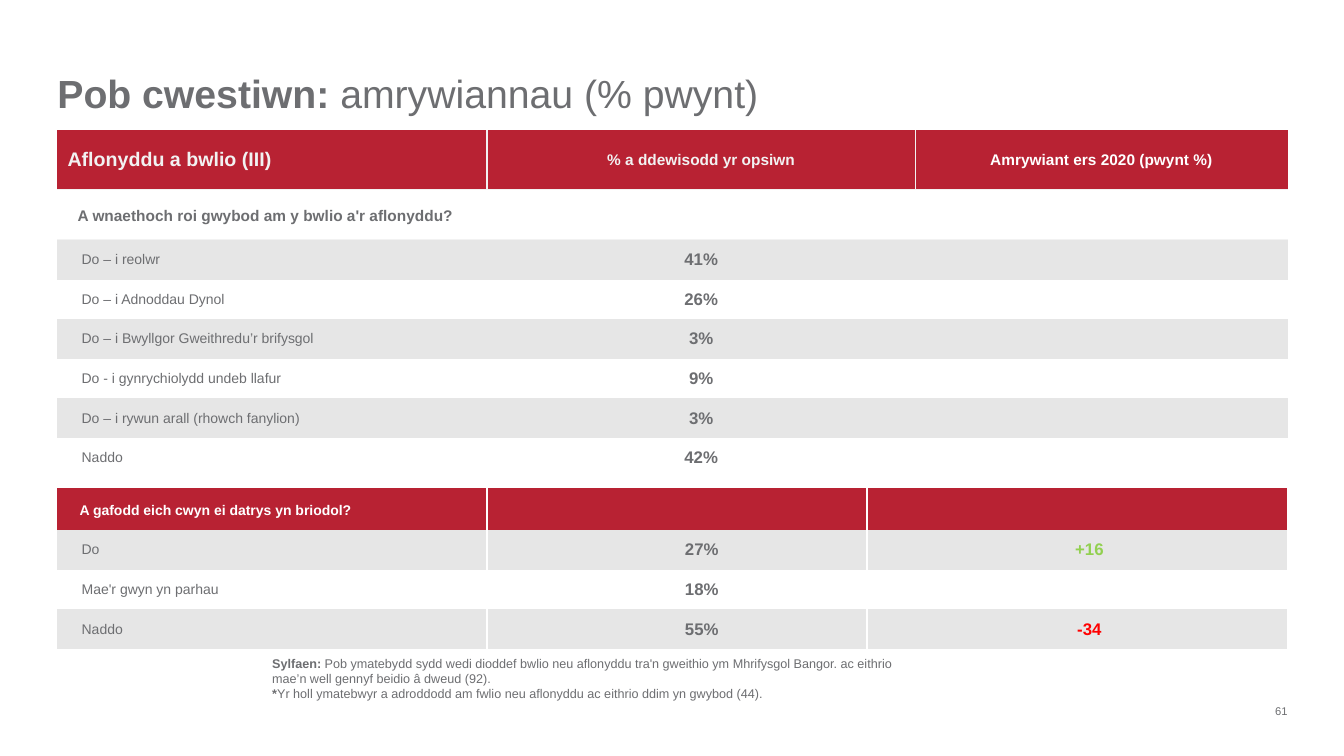
from lxml import etree
from pptx import Presentation
from pptx.dml.color import RGBColor
from pptx.enum import text
from pptx.oxml import ns
from pptx.util import Inches, Pt

# Content
TITLE = [("Pob cwestiwn: ", True), ("amrywiannau (% pwynt)", False)]
HARASSMENT_HEADS = ["Aflonyddu a bwlio (III)", "% a ddewisodd yr opsiwn",
                    "Amrywiant ers 2020 (pwynt %)"]
REPORTED_QUESTION = "A wnaethoch roi gwybod am y bwlio a'r aflonyddu?"
REPORTED = [
    ("Do – i reolwr", "41%", ""),
    ("Do – i Adnoddau Dynol", "26%", ""),
    ("Do – i Bwyllgor Gweithredu’r brifysgol", "3%", ""),
    ("Do - i gynrychiolydd undeb llafur", "9%", ""),
    ("Do – i rywun arall (rhowch fanylion)", "3%", ""),
    ("Naddo", "42%", ""),
]
RESOLVED_QUESTION = "A gafodd eich cwyn ei datrys yn briodol?"
RESOLVED = [
    ("Do", "27%", "+16"),
    ("Mae'r gwyn yn parhau", "18%", ""),
    ("Naddo", "55%", "-34"),
]
FOOTNOTE = [
    [("Sylfaen: ", True),
     ("Pob ymatebydd sydd wedi dioddef bwlio neu aflonyddu tra'n gweithio ym "
      "Mhrifysgol Bangor. ac eithrio mae’n well gennyf beidio â dweud (92).", False)],
    [("*", True),
     ("Yr holl ymatebwyr a adroddodd am fwlio neu aflonyddu ac eithrio ddim yn "
      "gwybod (44).", False)],
]
PAGE = [("61", False)]

THEME = {
    "font": "Arial", "ink": "6D6E71", "red": "B82233", "band": "E6E6E6",
    "pale": "F2F2F2", "white": "FFFFFF", "up": "92D050", "down": "FF0000",
    "title": 28, "table_title": 14, "head": 11, "label": 10, "value": 12,
    "note": 9, "page": 8,
}
NO_GRID_STYLE = "{2D5ABB26-0587-4C30-8999-92F81FD0307C}"
LEFT, WIDTH = 0.57, 12.2
LABEL_INDENT = 0.24
LEFT_ALIGN, CENTER, RIGHT = (text.PP_ALIGN.LEFT, text.PP_ALIGN.CENTER,
                             text.PP_ALIGN.RIGHT)

prs = Presentation()
prs.slide_width, prs.slide_height = Inches(13.33), Inches(7.5)
slide = prs.slides.add_slide(prs.slide_layouts[6])


def set_font(font, size, color="ink", bold=None):
    font.name = THEME["font"]
    font.size = Pt(THEME[size])
    font.color.rgb = RGBColor.from_string(THEME[color])
    font.bold = bold


def add_text(box, paragraphs, size, align=LEFT_ALIGN):
    frame = slide.shapes.add_textbox(*map(Inches, box)).text_frame
    frame.word_wrap = True
    frame.vertical_anchor = text.MSO_ANCHOR.BOTTOM
    frame.margin_left = frame.margin_right = frame.margin_top = frame.margin_bottom = 0
    for i, parts in enumerate(paragraphs):
        line = frame.paragraphs[0] if i == 0 else frame.add_paragraph()
        line.alignment = align
        set_font(line.font, size)
        for words, bold in parts:
            run = line.add_run()
            run.text = words
            run.font.bold = bold


def add_grid(top, height, columns, heads, row_count):
    """Table whose head rows are given and whose answer rows share the rest."""
    rows = heads + [(height - sum(heads)) / row_count] * row_count
    grid = slide.shapes.add_table(len(rows), len(columns), Inches(LEFT), Inches(top),
                                  Inches(WIDTH), Inches(height)).table
    grid._tbl.tblPr.find(ns.qn("a:tableStyleId")).text = NO_GRID_STYLE
    grid.horz_banding = False
    for column, width in zip(grid.columns, columns):
        column.width = Inches(width)
    for row, row_height in zip(grid.rows, rows):
        row.height = Inches(row_height)
    return grid


def set_borders(cell, sides, color):
    """Sides are given in schema order: L, R, T, B."""
    props = cell._tc.get_or_add_tcPr()
    for place, side in enumerate(sides):
        line = etree.Element(ns.qn(f"a:ln{side}"), w=str(Pt(1)))
        fill = etree.SubElement(line, ns.qn("a:solidFill"))
        etree.SubElement(fill, ns.qn("a:srgbClr"), val=THEME[color])
        props.insert(place, line)


def fill_cell(cell, words, size, color="ink", bold=False, align=LEFT_ALIGN,
              fill=None, margin=0, indent=0, spacing=None):
    cell.vertical_anchor = text.MSO_ANCHOR.MIDDLE
    cell.margin_left = cell.margin_right = Inches(margin)
    cell.margin_top = cell.margin_bottom = 0
    if fill:
        cell.fill.solid()
        cell.fill.fore_color.rgb = RGBColor.from_string(THEME[fill])
    else:
        cell.fill.background()
    line = cell.text_frame.paragraphs[0]
    line.alignment = align
    if spacing:
        line.line_spacing = spacing
    if indent:
        line._p.get_or_add_pPr().set("marL", str(Inches(indent)))
    set_font(line.font, size, color, bold)
    if words:
        line.add_run().text = words


def fill_answers(grid, first_row, answers, value_indent=0, change_indent=0):
    for i, (label, share, change) in enumerate(answers):
        fill = "band" if i % 2 == 0 else None
        row = first_row + i
        fill_cell(grid.cell(row, 0), label, "label", fill=fill, indent=LABEL_INDENT)
        fill_cell(grid.cell(row, 1), share, "value", bold=True, align=CENTER,
                  fill=fill, indent=value_indent)
        fill_cell(grid.cell(row, 2), change, "value",
                  "up" if change.startswith("+") else "down", True, CENTER,
                  fill, indent=change_indent)


# Page number and title
add_text((12.38, 6.99, 0.39, 0.13), [PAGE], "page", RIGHT)
add_text((LEFT, 0.68, 11.1, 0.47), [TITLE], "title")

# Harassment table
harassment = add_grid(1.29, 3.45, [4.26, 4.25, 3.69], [0.59, 0.5], len(REPORTED))
for col, heading in enumerate(HARASSMENT_HEADS):
    head = harassment.cell(0, col)
    fill_cell(head, heading, "head" if col else "table_title",
              "white" if col == 2 else "pale", True,
              CENTER if col else LEFT_ALIGN, "red", margin=0.1)
    set_borders(head, ["RB", "LRB", "LB"][col], "pale")
    question = harassment.cell(1, col)
    fill_cell(question, "" if col else REPORTED_QUESTION, "head", bold=True,
              margin=0.1, indent=0.1, spacing=1.2)
    set_borders(question, "TB", "pale")
fill_answers(harassment, 2, REPORTED)

# Resolution table
resolution = add_grid(4.84, 1.6, [4.26, 3.77, 4.17], [0.42], len(RESOLVED))
for col in range(3):
    fill_cell(resolution.cell(0, col), "" if col else RESOLVED_QUESTION, "label",
              "white", True, fill="red", margin=0.12, indent=0.1, spacing=1.2)
fill_answers(resolution, 1, RESOLVED, value_indent=0.49, change_indent=0.24)
for row in range(len(RESOLVED) + 1):
    for col, sides in enumerate(["R", "LR", "L"]):
        set_borders(resolution.cell(row, col), sides, "white")

# Footnote
add_text((2.7, 6.66, 6.37, 0.3), FOOTNOTE, "note")

prs.save("out.pptx")
